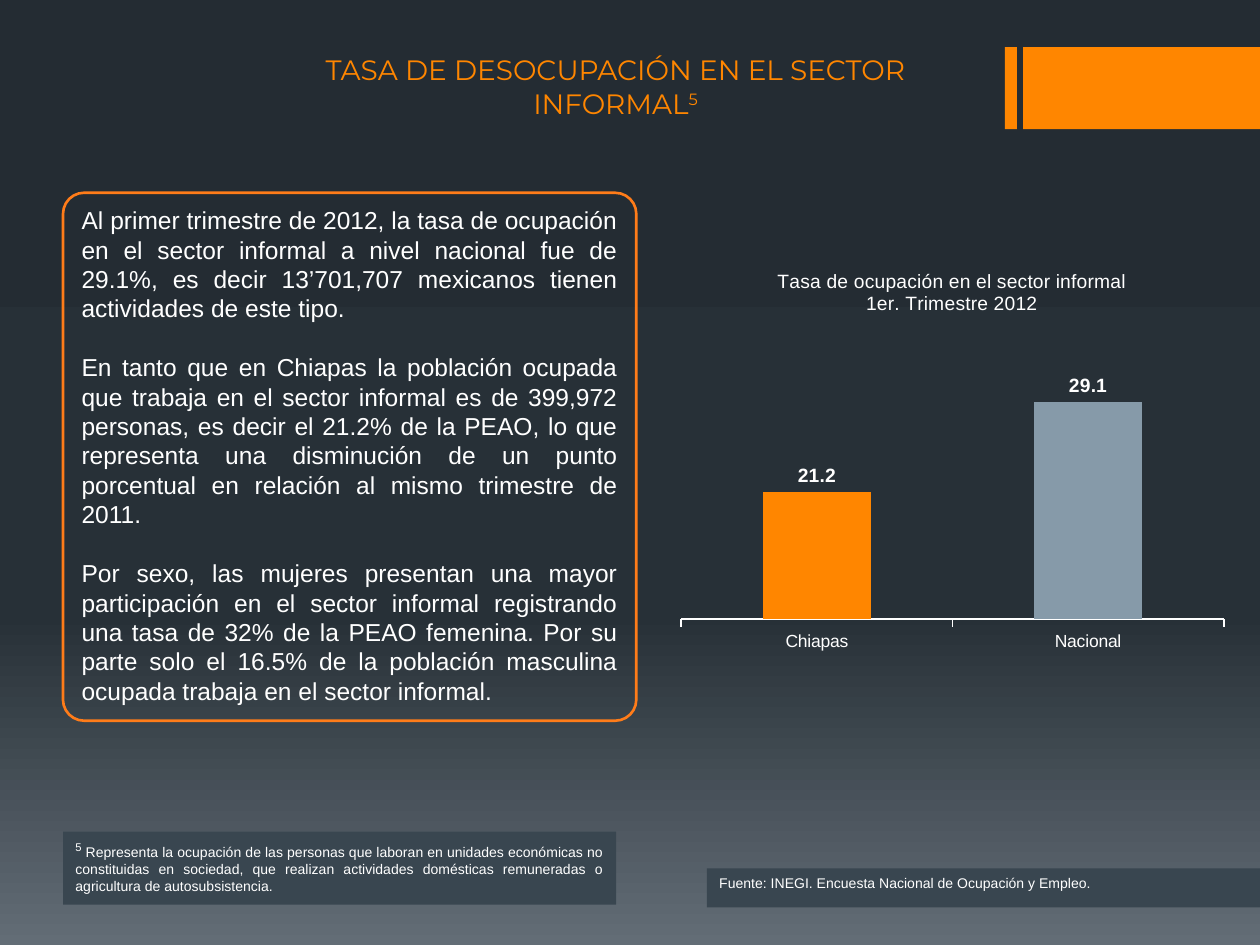
"""Build a slide on informal-sector employment with a text panel and a column chart."""
from dataclasses import dataclass

from pptx import Presentation
from pptx.chart.data import CategoryChartData
from pptx.dml.color import RGBColor
from pptx.enum.chart import XL_CHART_TYPE, XL_LABEL_POSITION, XL_TICK_LABEL_POSITION, XL_TICK_MARK
from pptx.enum.shapes import MSO_SHAPE
from pptx.enum.text import MSO_ANCHOR, PP_ALIGN
from pptx.oxml import parse_xml
from pptx.oxml.ns import nsdecls
from pptx.util import Inches, Pt

WIDTH, HEIGHT = Inches(10), Inches(7.5)


@dataclass(frozen=True)
class Theme:
    accent: str = "FF8600"
    outline: str = "FF7C19"
    muted: str = "869AA9"
    band: str = "394650"
    text: str = "FFFFFF"
    backdrop: tuple = ((0, "242C33"), (65, "273037"), (100, "636D76"))
    heading_font: str = "Montserrat"
    body_font: str = "Arial"
    heading: int = 16
    body: int = 14
    label: int = 11
    axis: int = 10
    note: int = 8


THEME = Theme()
BODY = [
    "Al primer trimestre de 2012, la tasa de ocupación en el sector informal a nivel nacional "
    "fue de 29.1%, es decir 13’701,707 mexicanos tienen actividades de este tipo.",
    "En tanto que en Chiapas la población ocupada que trabaja en el sector informal es de "
    "399,972 personas, es decir el 21.2% de la PEAO, lo que representa una disminución de un "
    "punto porcentual en relación al mismo trimestre de 2011.",
    "Por sexo, las mujeres presentan una mayor participación en el sector informal registrando "
    "una tasa de 32% de la PEAO femenina. Por su parte solo el 16.5% de la población masculina "
    "ocupada trabaja en el sector informal.",
]
FOOTNOTE = (" Representa la ocupación de las personas que laboran en unidades económicas no "
            "constituidas en sociedad, que realizan actividades domésticas remuneradas o "
            "agricultura de autosubsistencia.")
SOURCE = "Fuente: INEGI. Encuesta Nacional de Ocupación y Empleo."


def share(left, top, width, height):
    """Turn percentages of the slide into a position and a size."""
    return [round(v * side / 100) for v, side in
            zip((left, top, width, height), (WIDTH, HEIGHT, WIDTH, HEIGHT))]


def apply(target, values):
    """Set each named attribute on the target."""
    for name, value in values.items():
        setattr(target, name, value)


def style(font, size, color=THEME.text, name=THEME.body_font, bold=False):
    """Give a font its size, face and colour."""
    apply(font, {"size": Pt(size), "name": name, "bold": bold})
    font.color.rgb = RGBColor.from_string(color)


def add_panel(s, box, fill=None, line=None, kind=MSO_SHAPE.RECTANGLE):
    """Add a flat shape with an optional fill and outline."""
    sp = s.shapes.add_shape(kind, *share(*box))
    sp.shadow.inherit = False
    if fill:
        sp.fill.solid()
        sp.fill.fore_color.rgb = RGBColor.from_string(fill)
    else:
        sp.fill.background()
    if line:
        sp.line.color.rgb = RGBColor.from_string(line)
        sp.line.width = Pt(1.5)
    else:
        sp.line.fill.background()
    return sp


def write(sp, paragraphs, align=PP_ALIGN.JUSTIFY, gap=0, **look):
    """Fill a shape with paragraphs of (text, size, raised) runs."""
    tf = sp.text_frame
    apply(tf, {"word_wrap": True, "vertical_anchor": MSO_ANCHOR.TOP})
    for i, runs in enumerate(paragraphs):
        p = tf.add_paragraph() if i else tf.paragraphs[0]
        apply(p, {"alignment": align, "space_before": Pt(gap if i else 0)})
        for text, size, raised in runs:
            r = p.add_run()
            r.text = text
            style(r.font, size, **look)
            if raised:
                r.font._element.set("baseline", "30000")


def set_layout(parent, index, x, y, size=None):
    """Place a chart part by shares of the chart area."""
    values = {"xMode": "edge", "yMode": "edge", "x": x, "y": y}
    if size:
        values = {"layoutTarget": "inner", **values, "w": size[0], "h": size[1]}
    inner = "".join(f'<c:{k} val="{v}"/>' for k, v in values.items())
    for old in parent.findall("{*}layout"):
        parent.remove(old)
    parent.insert(index, parse_xml(f'<c:layout {nsdecls("c")}><c:manualLayout>{inner}'
                                   '</c:manualLayout></c:layout>'))


def add_columns(s, box):
    """Add the column chart comparing Chiapas with the country."""
    data = CategoryChartData(number_format="0.0")
    data.categories = ["Chiapas", "Nacional"]
    data.add_series("Series 1", (21.2, 29.1))
    chart = s.shapes.add_chart(XL_CHART_TYPE.COLUMN_CLUSTERED, *share(*box), data).chart
    style(chart.font, THEME.axis)
    apply(chart, {"has_legend": False, "has_title": True})
    tf = chart.chart_title.text_frame
    for i, text in enumerate(("Tasa de ocupación en el sector informal", "1er. Trimestre 2012")):
        p = tf.add_paragraph() if i else tf.paragraphs[0]
        r = p.add_run()
        r.text = text
        style(r.font, THEME.label)
    chart.chart_title.include_in_layout = False
    set_layout(chart.chart_title._element, 1, 0.19, 0.04)
    set_layout(chart._chartSpace.chart.plotArea, 0, 0.03, 0.21, (0.94, 0.68))

    apply(chart.value_axis, {"minimum_scale": 10, "maximum_scale": 35, "visible": False,
                             "has_major_gridlines": False})
    apply(chart.category_axis, {"major_tick_mark": XL_TICK_MARK.OUTSIDE,
                                "tick_label_position": XL_TICK_LABEL_POSITION.LOW})
    line = chart.category_axis.format.line
    line.color.rgb = RGBColor.from_string(THEME.text)
    line.width = Pt(1)

    plot = chart.plots[0]
    apply(plot, {"gap_width": 150, "vary_by_categories": False, "has_data_labels": True})
    apply(plot.data_labels, {"show_value": True, "number_format": "0.0",
                             "number_format_is_linked": False,
                             "position": XL_LABEL_POSITION.OUTSIDE_END})
    style(plot.data_labels.font, THEME.label, bold=True)
    for i, color in enumerate((THEME.accent, THEME.muted)):
        fill = plot.series[0].points[i].format.fill
        fill.solid()
        fill.fore_color.rgb = RGBColor.from_string(color)


def set_backdrop(s):
    """Paint the slide background with a vertical gradient."""
    stops = "".join(f'<a:gs pos="{pos * 1000}"><a:srgbClr val="{color}"/></a:gs>'
                    for pos, color in THEME.backdrop)
    s._element.cSld.insert(0, parse_xml(
        f'<p:bg {nsdecls("p", "a")}><p:bgPr><a:gradFill><a:gsLst>{stops}</a:gsLst>'
        '<a:lin ang="5400000" scaled="0"/></a:gradFill><a:effectLst/></p:bgPr></p:bg>'))


def main():
    """Build and save the slide."""
    prs = Presentation()
    apply(prs, {"slide_width": WIDTH, "slide_height": HEIGHT})
    s = prs.slides.add_slide(prs.slide_layouts[6])
    set_backdrop(s)
    for left, width in ((79.75, 0.95), (81.2, 18.8)):
        add_panel(s, (left, 5, width, 8.67), fill=THEME.accent)

    sp = add_panel(s, (5, 20.4, 45.5, 55.87), line=THEME.outline, kind=MSO_SHAPE.ROUNDED_RECTANGLE)
    sp.adjustments[0] = 0.04
    write(sp, [[(text, THEME.body, False)] for text in BODY], gap=16.8)

    sp = add_panel(s, (56.1, 91.9, 43.9, 4.13), fill=THEME.band)
    write(sp, [[(SOURCE, THEME.note, False)]])
    add_columns(s, (52.7, 26.13, 45.8, 44.27))

    sp = s.shapes.add_textbox(*share(18.4, 4.93, 60.9, 8.53))
    write(sp, [[("TASA DE DESOCUPACIÓN EN EL SECTOR INFORMAL", THEME.heading, False),
                ("5", THEME.heading, True)]],
          align=PP_ALIGN.CENTER, color=THEME.accent, name=THEME.heading_font)

    sp = add_panel(s, (5, 88, 43.9, 7.73), fill=THEME.band)
    write(sp, [[("5", THEME.label, True), (FOOTNOTE, THEME.note, False)]])
    prs.save("out.pptx")


if __name__ == "__main__":
    main()
